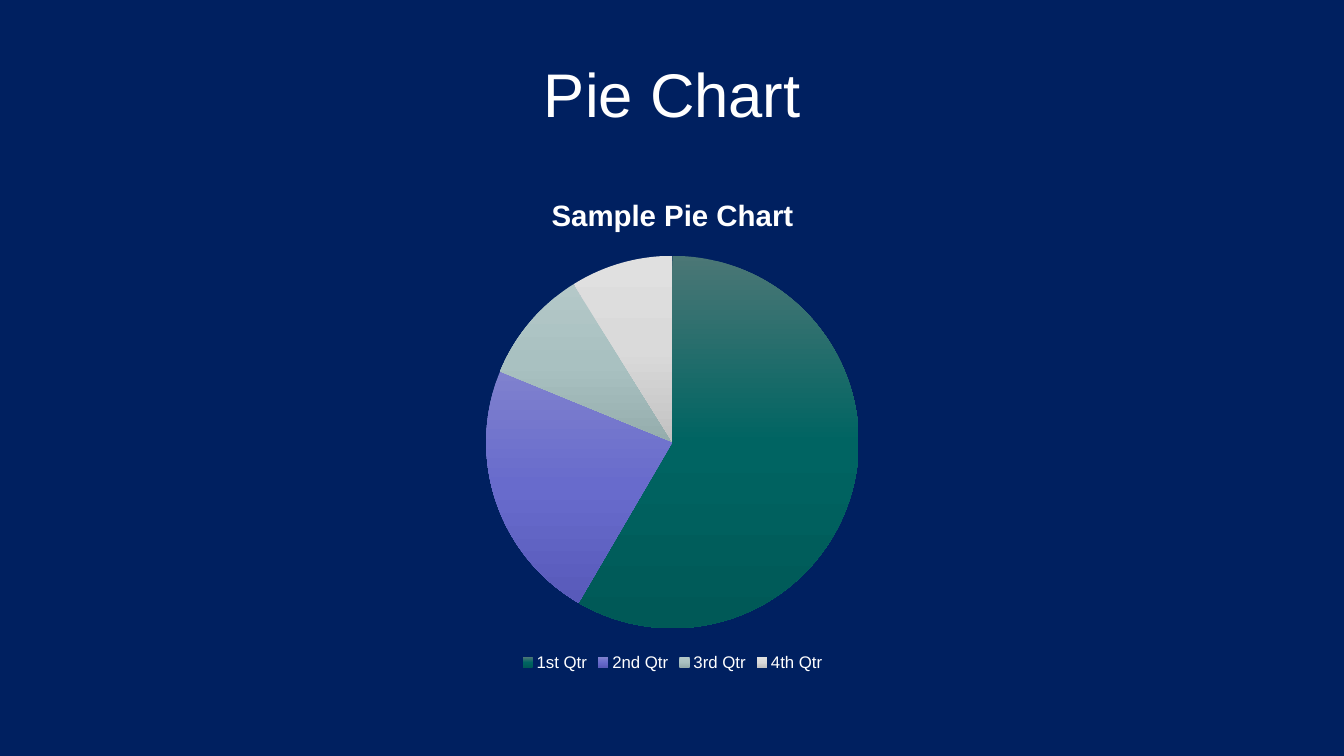
from copy import deepcopy

from pptx import Presentation
from pptx.chart.data import CategoryChartData
from pptx.dml.color import RGBColor
from pptx.enum.chart import XL_CHART_TYPE, XL_LEGEND_POSITION
from pptx.enum.text import MSO_ANCHOR, PP_ALIGN
from pptx.oxml.ns import qn
from pptx.util import Inches, Pt

PIE = XL_CHART_TYPE.PIE
BOTTOM = XL_LEGEND_POSITION.BOTTOM
CENTER = PP_ALIGN.CENTER
MIDDLE = MSO_ANCHOR.MIDDLE

COLORS = {"background": "002060", "text": "FFFFFF"}
QUARTERS = {
    "1st Qtr": (59, ("4B7776", "006462", "005957")),
    "2nd Qtr": (23, ("7F81CE", "686BCC", "585ABA")),
    "3rd Qtr": (10, ("B4C8C8", "A9C1C1", "95ADAD")),
    "4th Qtr": (9, ("E0E0E0", "DADADA", "C2C2C2")),
}


class SlideBuilder:
    font_name = "Arial"
    left = Inches(0.67)
    width = Inches(12)

    def __init__(self, prs):
        self.slide = prs.slides.add_slide(prs.slide_layouts[5])
        fill = self.slide.background.fill
        fill.solid()
        fill.fore_color.rgb = RGBColor.from_string(COLORS["background"])

    def style_font(self, font, size, bold=False):
        font.name = self.font_name
        font.size = Pt(size)
        font.bold = bold
        font.color.rgb = RGBColor.from_string(COLORS["text"])

    def title(self, text, top, height):
        sp = self.slide.shapes.title
        sp.left, sp.top, sp.width, sp.height = self.left, top, self.width, height
        tf = sp.text_frame
        tf.text = text
        tf.vertical_anchor = MIDDLE
        p = tf.paragraphs[0]
        p.alignment = CENTER
        self.style_font(p.font, 44)

    def pie(self, title, quarters, top, height):
        data = CategoryChartData()
        data.categories = list(quarters)
        data.add_series("Series 1", [value for value, _ in quarters.values()])
        frame = self.slide.shapes.add_chart(PIE, self.left, top, self.width, height, data)
        chart = frame.chart
        self.style_font(chart.font, 10)

        chart.has_title = True
        tf = chart.chart_title.text_frame
        tf.text = title
        self.style_font(tf.paragraphs[0].font, 21, bold=True)
        chart.chart_title.include_in_layout = False

        chart.has_legend = True
        chart.legend.position = BOTTOM
        chart.legend.include_in_layout = False
        self.style_font(chart.legend.font, 12)

        plot = chart.plots[0]
        plot.vary_by_categories = True
        series = plot.series[0]
        for i, (_, colors) in enumerate(quarters.values()):
            self.slice_gradient(series.points[i], series, colors)

    def slice_gradient(self, point, series, colors):
        point.format.line.fill.background()
        fill = point.format.fill
        fill.gradient()
        fill.gradient_angle = 270
        stop_list = series._element.findall(".//" + qn("a:gsLst"))[-1]
        stop_list.insert(1, deepcopy(stop_list[0]))
        for stop, color, position in zip(fill.gradient_stops, colors, (0, 0.5, 1)):
            stop.color.rgb = RGBColor.from_string(color)
            stop.position = position


def main():
    prs = Presentation()
    prs.slide_width, prs.slide_height = Inches(13.33), Inches(7.5)
    s = SlideBuilder(prs)
    s.title("Pie Chart", Inches(0.3), Inches(1.25))
    s.pie("Sample Pie Chart", QUARTERS, Inches(1.75), Inches(4.95))
    prs.save("out.pptx")


if __name__ == "__main__":
    main()
